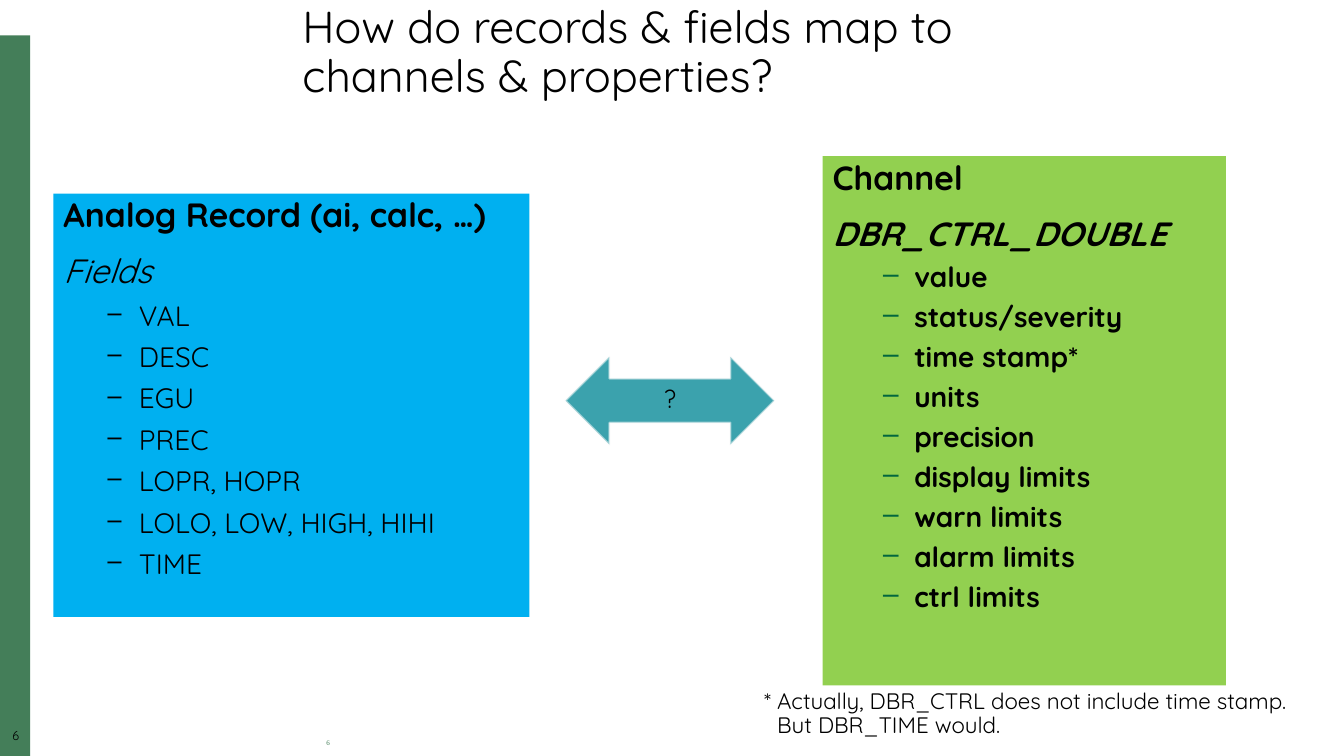
import pptx
import pptx.util
import pptx.dml.color
import pptx.enum.shapes
import pptx.enum.text
import pptx.oxml.ns
import lxml.etree

Inches = pptx.util.Inches
Pt = pptx.util.Pt
SHAPE = pptx.enum.shapes.MSO_SHAPE
ALIGN = pptx.enum.text.PP_ALIGN
ANCHOR = pptx.enum.text.MSO_ANCHOR
COLORS = {
    "ink": "000000",
    "sidebar": "447E59",
    "record": "00B0F0",
    "channel": "92D050",
    "arrow": "3BA2AD",
    "arrow_edge": "F9F9F9",
    "channel_dash": "01673E",
}


def color(name):
    return pptx.dml.color.RGBColor.from_string(COLORS[name])


def add_element(parent, tag, **attributes):
    return lxml.etree.SubElement(parent, pptx.oxml.ns.qn(tag), **attributes)


class SlideBuilder:
    typeface = "Quicksand"
    line_spacing = 0.9

    def __init__(self, deck):
        self.page = deck.slides.add_slide(deck.slide_layouts[5])

    def format(self, para, size, ink="ink", typeface=None, bold=False, italic=False,
               align=ALIGN.LEFT, before=0):
        para.line_spacing = self.line_spacing
        para.space_before = Pt(before)
        para.alignment = align
        font = para.font
        font.size = Pt(size)
        font.name = typeface or self.typeface
        font.bold = bold
        font.italic = italic
        font.color.rgb = color(ink)

    def title(self, text, left, top, width, height):
        box = self.page.shapes.title
        box.left, box.top = Inches(left), Inches(top)
        box.width, box.height = Inches(width), Inches(height)
        frame = box.text_frame
        frame.text = text
        frame.vertical_anchor = ANCHOR.TOP
        self.format(frame.paragraphs[0], 32)

    def shape(self, preset, fill, left, top, width, height):
        box = self.page.shapes.add_shape(
            preset, Inches(left), Inches(top), Inches(width), Inches(height))
        box.shadow.inherit = False
        box.fill.solid()
        box.fill.fore_color.rgb = color(fill)
        box.line.fill.background()
        return box

    def label(self, text, left, top, width, height, size, inset=None, **style):
        box = self.page.shapes.add_textbox(
            Inches(left), Inches(top), Inches(width), Inches(height))
        frame = box.text_frame
        frame.word_wrap = True
        if inset is not None:
            frame.margin_left = frame.margin_right = Inches(inset)
            frame.margin_top = frame.margin_bottom = Inches(inset)
        frame.text = text
        self.format(frame.paragraphs[0], size, **style)
        return frame.paragraphs[0]

    def indent(self, para, margin, hanging):
        properties = para._p.get_or_add_pPr()
        properties.set("marL", str(Inches(margin)))
        properties.set("indent", str(-Inches(hanging)))
        return properties

    def dash(self, para, margin, ink, percent):
        properties = self.indent(para, margin, 0.31)
        add_element(add_element(properties, "a:buClr"), "a:srgbClr", val=COLORS[ink])
        add_element(properties, "a:buSzPct", val=str(percent * 1000))
        add_element(properties, "a:buChar", char="–")

    def panel(self, bounds, fill, heading, subheading, items, margin, dash_ink,
              dash_percent, before, bold):
        frame = self.shape(SHAPE.RECTANGLE, fill, *bounds).text_frame
        frame.word_wrap = True
        frame.vertical_anchor = ANCHOR.TOP
        frame.text = "\n".join([heading, subheading, *items])
        first, second, *entries = frame.paragraphs
        self.format(first, 24, bold=True)
        self.format(second, 24, bold=bold, italic=True, before=14)
        for para in entries:
            para.level = 1
            self.dash(para, margin, dash_ink, dash_percent)
            self.format(para, 20, bold=bold, before=before)

    def arrow(self, text, left, top, width, height):
        box = self.shape(SHAPE.LEFT_RIGHT_ARROW, "arrow", left, top, width, height)
        box.line.color.rgb = color("arrow_edge")
        box.line.width = Pt(1.35)
        edge = box.line._ln.find(".//" + pptx.oxml.ns.qn("a:srgbClr"))
        add_element(edge, "a:alpha", val="50000")
        frame = box.text_frame
        frame.text = text
        frame.vertical_anchor = ANCHOR.MIDDLE
        self.format(frame.paragraphs[0], 18, align=ALIGN.CENTER)


def main():
    deck = pptx.Presentation()
    deck.slide_width, deck.slide_height = Inches(13.33), Inches(7.5)
    slide = SlideBuilder(deck)

    slide.shape(SHAPE.RECTANGLE, "sidebar", 0, 0.35, 0.3, 7.15)
    slide.label("6", 0, 7.24, 0.31, 0.17, 9, inset=0, align=ALIGN.CENTER)
    slide.title("How do records & fields map to channels & properties?", 2.9, 0, 7.94, 1.07)
    slide.panel(
        (0.53, 1.92, 4.72, 4.2), "record", "Analog Record (ai, calc, …)", "Fields",
        ["VAL", "DESC", "EGU", "PREC", "LOPR, HOPR", "LOLO, LOW, HIGH, HIHI", "TIME"],
        margin=0.75, dash_ink="ink", dash_percent=90, before=8, bold=False)
    slide.label("6", 1.67, 7.29, 3.17, 0.2, 5, ink="sidebar",
                typeface="Times New Roman", align=ALIGN.CENTER)
    slide.panel(
        (8.16, 1.55, 4, 5.25), "channel", "Channel", "DBR_CTRL_DOUBLE",
        ["value", "status/severity", "time stamp*", "units", "precision",
         "display limits", "warn limits", "alarm limits", "ctrl limits"],
        margin=0.81, dash_ink="channel_dash", dash_percent=100, before=7, bold=True)
    slide.arrow("?", 5.61, 3.54, 2.07, 0.87)
    footnote = slide.label(
        "* Actually, DBR_CTRL does not include time stamp.\vBut DBR_TIME would.",
        7.48, 6.8, 5.71, 0.59, 16)
    slide.indent(footnote, 0.13, 0.13)

    deck.save("out.pptx")


if __name__ == "__main__":
    main()
